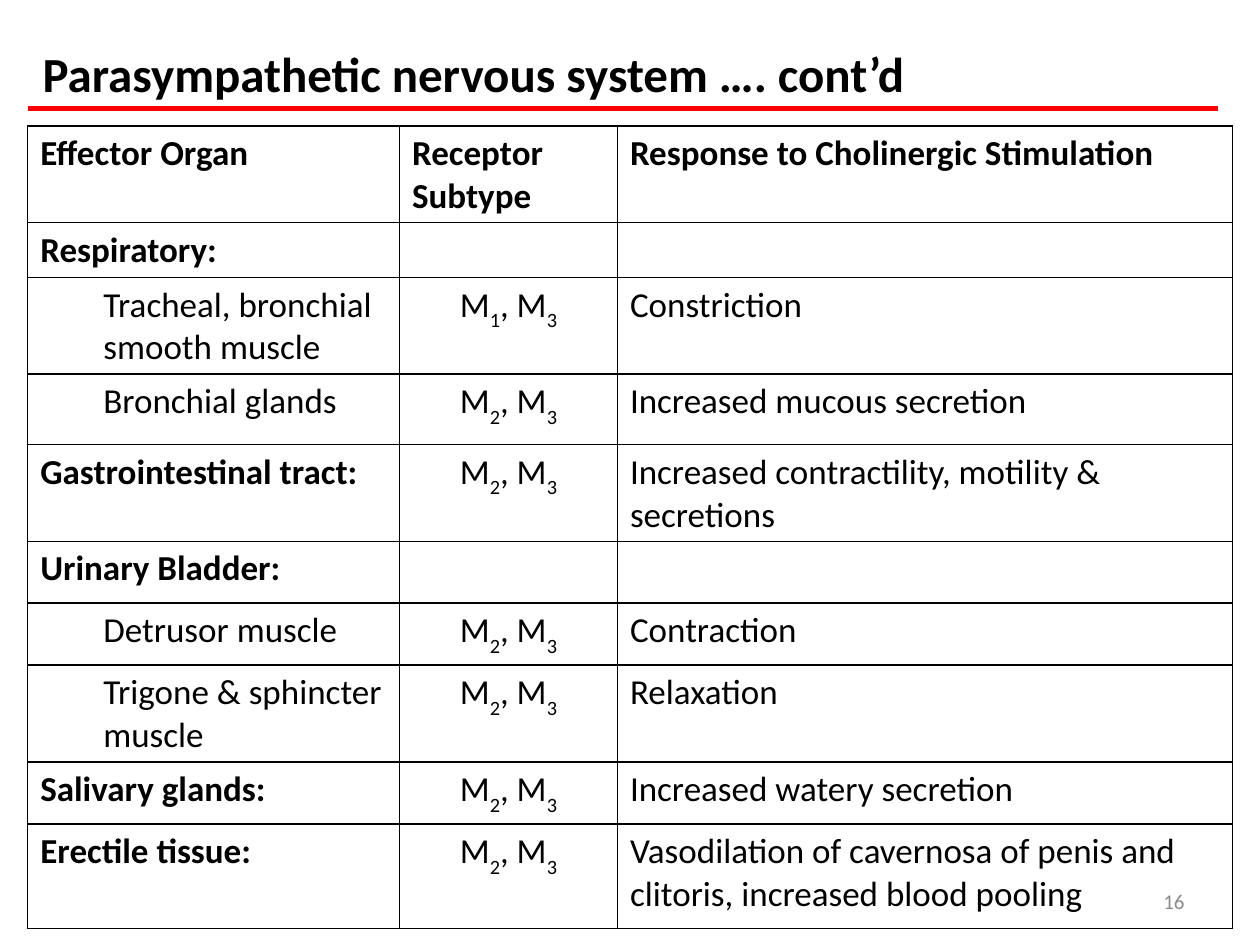
from lxml import etree
from pptx import Presentation
from pptx.dml.color import RGBColor
from pptx.enum.shapes import MSO_CONNECTOR
from pptx.enum.text import MSO_ANCHOR, PP_ALIGN
from pptx.oxml.ns import qn
from pptx.util import Inches, Pt

STRAIGHT = MSO_CONNECTOR.STRAIGHT
MIDDLE = MSO_ANCHOR.MIDDLE
LEFT, CENTER, RIGHT = PP_ALIGN.LEFT, PP_ALIGN.CENTER, PP_ALIGN.RIGHT
COLORS = {"text": "000000", "rule": "FF0000", "number": "8C8C8C"}

prs = Presentation()
prs.slide_width, prs.slide_height = Inches(10), Inches(7.5)
slide = prs.slides.add_slide(prs.slide_layouts[6])
margin = Inches(0.22)


def style(paragraph, size, color="text", bold=False, align=LEFT):
    paragraph.alignment = align
    paragraph.font.name = "Calibri"
    paragraph.font.size = Pt(size)
    paragraph.font.bold = bold
    paragraph.font.color.rgb = RGBColor.from_string(COLORS[color])


def add_border(cell):
    props = cell._tc.get_or_add_tcPr()
    for position, side in enumerate(("lnL", "lnR", "lnT", "lnB")):
        edge = etree.Element(qn(f"a:{side}"), w=str(Pt(1)))
        fill = etree.SubElement(edge, qn("a:solidFill"))
        etree.SubElement(fill, qn("a:srgbClr"), val=COLORS["text"])
        props.insert(position, edge)


number = slide.shapes.add_textbox(Inches(7.17), Inches(6.95), Inches(2.33), Inches(0.4)).text_frame
number.word_wrap = True
number.vertical_anchor = MIDDLE
number.text = "16"
style(number.paragraphs[0], 12, "number", align=RIGHT)

column_widths = [2.95, 1.73, 4.88]
organs = [
    (0.68, "heading", "Effector Organ", "Receptor Subtype", "Response to Cholinergic Stimulation"),
    (0.39, "group", "Respiratory:", "", ""),
    (0.68, "part", "Tracheal, bronchial smooth muscle", "13", "Constriction"),
    (0.56, "part", "Bronchial glands", "23", "Increased mucous secretion"),
    (0.56, "group", "Gastrointestinal tract:", "23", "Increased contractility, motility & secretions"),
    (0.49, "group", "Urinary Bladder:", "", ""),
    (0.39, "part", "Detrusor muscle", "23", "Contraction"),
    (0.68, "part", "Trigone & sphincter muscle", "23", "Relaxation"),
    (0.39, "group", "Salivary glands:", "23", "Increased watery secretion"),
    (0.83, "group", "Erectile tissue:", "23",
     "Vasodilation of cavernosa of penis and clitoris, increased blood pooling"),
]
table = slide.shapes.add_table(
    len(organs), len(column_widths), margin, Inches(1),
    Inches(sum(column_widths)), Inches(sum(organ[0] for organ in organs)),
).table
table.first_row = table.horz_banding = False
for column, width in zip(table.columns, column_widths):
    column.width = Inches(width)

for row, (height, kind, *entries) in zip(table.rows, organs):
    row.height = Inches(height)
    for index, (cell, entry) in enumerate(zip(row.cells, entries)):
        cell.fill.background()
        add_border(cell)
        if not entry:
            continue
        paragraph = cell.text_frame.paragraphs[0]
        receptor = index == 1 and kind != "heading"
        if index == 0 and kind == "part":
            paragraph.level = 1
            paragraph._p.get_or_add_pPr().set("marL", str(Inches(0.5)))
        bold = kind == "heading" or (index == 0 and kind == "group")
        style(paragraph, 20, bold=bold, align=CENTER if receptor else LEFT)
        if receptor:
            for prefix, subtype in zip(("M", ", M"), entry):
                paragraph.add_run().text = prefix
                subscript = paragraph.add_run()
                subscript.text = subtype
                subscript._r.get_or_add_rPr().set("baseline", "-30000")
        else:
            paragraph.add_run().text = entry

title = slide.shapes.add_textbox(Inches(0.24), Inches(0.3), Inches(9.51), Inches(0.57)).text_frame
title.word_wrap = True
title.text = "Parasympathetic nervous system …. cont’d"
style(title.paragraphs[0], 28, bold=True)

rule = slide.shapes.add_connector(STRAIGHT, margin, Inches(0.86), Inches(9.67), Inches(0.86))
rule.line.color.rgb = RGBColor.from_string(COLORS["rule"])
rule.line.width = Pt(3)
etree.SubElement(rule._element.spPr, qn("a:effectLst"))

prs.save("out.pptx")
